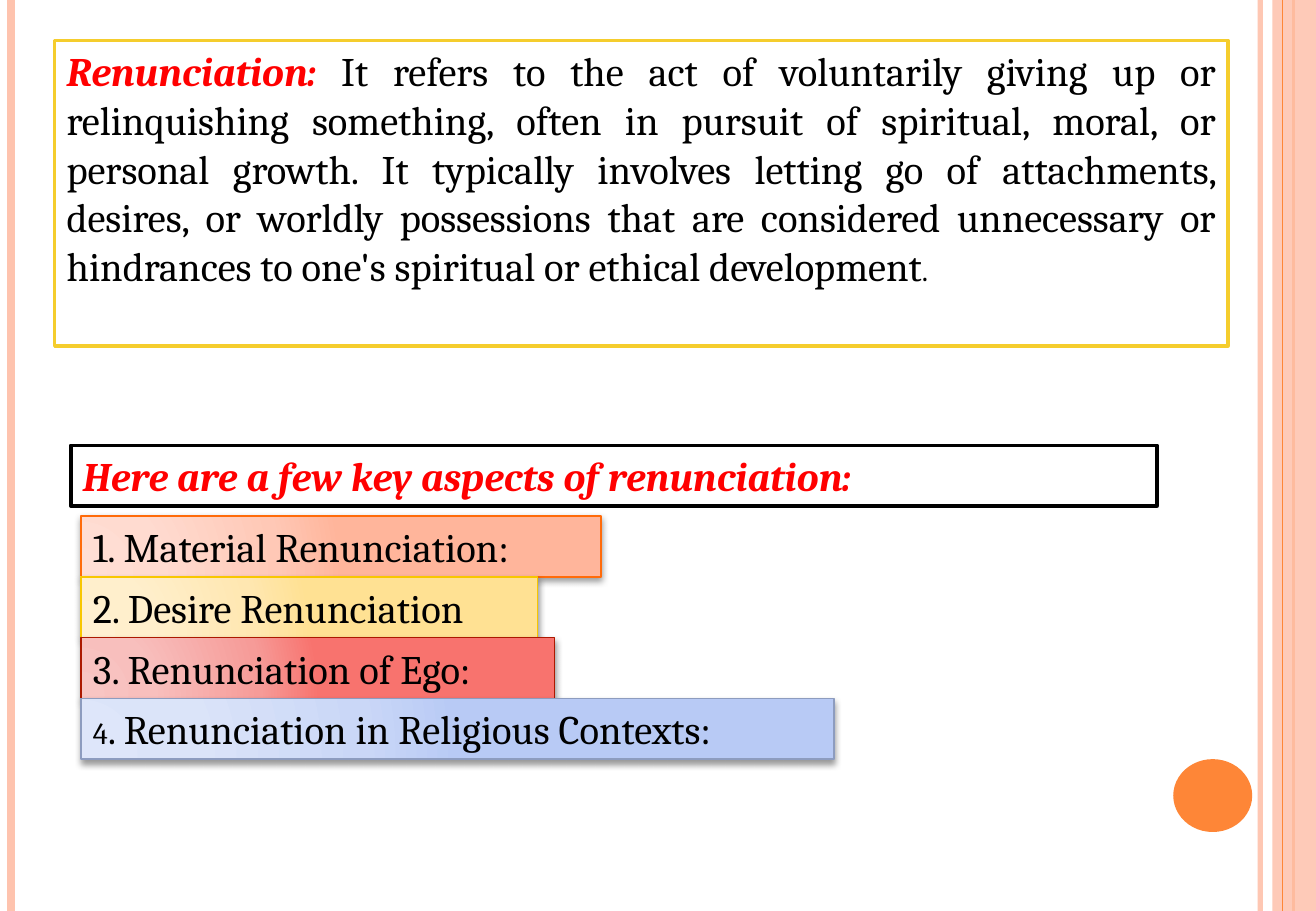
from lxml.etree import SubElement
from pptx import Presentation
from pptx.dml.color import RGBColor
from pptx.enum.shapes import MSO_CONNECTOR, MSO_SHAPE
from pptx.enum.text import MSO_ANCHOR, PP_ALIGN
from pptx.oxml import parse_xml
from pptx.oxml.ns import nsdecls, qn
from pptx.util import Inches, Pt

WHITE = RGBColor(0xFF, 0xFF, 0xFF)
BLACK = RGBColor(0x00, 0x00, 0x00)
RED = RGBColor(0xFF, 0x00, 0x00)
PEACH = RGBColor(0xFE, 0xC3, 0xAE)
ORANGE = RGBColor(0xFE, 0x86, 0x37)
GOLD = RGBColor(0xF5, 0xCD, 0x2D)
RUST = RGBColor(0xFF, 0x6B, 0x0A)
YELLOW = RGBColor(0xF8, 0xC7, 0x00)
MAROON = RGBColor(0xAC, 0x18, 0x00)
STEEL = RGBColor(0x8D, 0x9C, 0xBF)

# Grid of 130 columns by 90 rows, twelve to the inch
CELL = Inches(1) / 12
COLS, ROWS = 130, 90

deck = Presentation()
deck.slide_width = round(COLS * CELL)
deck.slide_height = round(ROWS * CELL)
slide = deck.slides.add_slide(deck.slide_layouts[6])
shapes = slide.shapes


def add_box(kind, left, top, width, height, fill=None, edge=None, line=1):
    box = shapes.add_shape(kind, *[round(n * CELL) for n in (left, top, width, height)])
    box.shadow.inherit = False
    if fill is not None:
        box.fill.solid()
        box.fill.fore_color.rgb = fill
    if edge is None:
        box.line.fill.background()
    else:
        box.line.color.rgb = edge
        box.line.width = Pt(line)
    return box


def add_text(box, runs, align=PP_ALIGN.LEFT):
    frame = box.text_frame
    frame.word_wrap = True
    frame.vertical_anchor = MSO_ANCHOR.TOP
    para = frame.paragraphs[0]
    para.alignment = align
    for text, size, color, strong in runs:
        run = para.add_run()
        run.text = text
        font = run.font
        font.name = "Cambria"
        font.size = Pt(size)
        font.color.rgb = color
        font.bold = font.italic = strong


# Side stripes: the band lies over the first three lines
for col, color, width, alpha in [
    (124.5, PEACH, 3, 93),
    (1.1, PEACH, 4.5, 100),
    (127.8, ORANGE, 1.5, 100),
    (None, PEACH, 0, 87),
    (126.7, ORANGE, 0.75, 100),
]:
    if col is None:
        part = add_box(MSO_SHAPE.RECTANGLE, 125.7, 0, COLS - 125.7, ROWS, color)
    else:
        x = round(col * CELL)
        part = shapes.add_connector(MSO_CONNECTOR.STRAIGHT, x, 0, x, deck.slide_height)
        part.line.color.rgb = color
        part.line.width = Pt(width)
        SubElement(part._element.spPr, qn("a:effectLst"))
    if alpha < 100:
        tint = next(part._element.spPr.iter(qn("a:srgbClr")))
        SubElement(tint, qn("a:alpha"), val=str(alpha * 1000))

# Corner dot
add_box(MSO_SHAPE.OVAL, 115.9, 75, 7.8, 7.2, ORANGE)

# Definition
box = add_box(MSO_SHAPE.RECTANGLE, 5.4, 4, 115.9, 30.2, WHITE, GOLD, 2)
add_text(box, [
    ("Renunciation: ", 24, RED, True),
    ("It refers to the act of voluntarily giving up or relinquishing something, "
     "often in pursuit of spiritual, moral, or personal growth. It typically "
     "involves letting go of attachments, desires, or worldly possessions that "
     "are considered unnecessary or hindrances to one's spiritual or ethical "
     "development", 24, BLACK, False),
    (".", 18, BLACK, False),
], PP_ALIGN.JUSTIFY)

# Heading of the list
box = add_box(MSO_SHAPE.RECTANGLE, 7, 44, 107.3, 6, WHITE, BLACK, 2)
add_text(box, [("Here are a few key aspects of renunciation:", 24, RED, True)])

# Four aspects, each with a round gradient and a soft shadow
aspects = [
    ("1", 24, ". Material Renunciation:", 51.4, RUST,
     ("FFDED5", "FFDBD0", "FFC8B6", "FFB59B")),
    ("2", 24, ". Desire Renunciation", 45.1, YELLOW,
     ("FFF0D1", "FFEFCC", "FFE7B1", "FFE193")),
    ("3", 24, ". Renunciation of Ego:", 46.8, MAROON,
     ("F8C5C3", "F8BFBD", "F69B98", "F8736E")),
    ("4", 18, ". Renunciation in Religious Contexts:", 74.4, STEEL,
     ("DEE6FA", "DBE4F9", "CAD7F7", "B8CAF5")),
]
for row, (digit, size, label, width, edge, tones) in enumerate(aspects):
    box = add_box(MSO_SHAPE.RECTANGLE, 8, 51 + 6 * row, width, 6, None, edge)
    add_text(box, [(digit, size, BLACK, False), (label, 24, BLACK, False)])
    props = box._element.spPr
    stops = "".join(
        f'<a:gs pos="{pos * 1000}"><a:srgbClr val="{tone}"/></a:gs>'
        for pos, tone in zip((0, 30, 75, 100), tones)
    )
    box.fill.gradient()
    props.replace(props.find(qn("a:gradFill")), parse_xml(
        f'<a:gradFill {nsdecls("a")} rotWithShape="1"><a:gsLst>{stops}</a:gsLst>'
        '<a:path path="circle"><a:fillToRect l="5000" t="100000" r="120000" '
        'b="10000"/></a:path></a:gradFill>'
    ))
    props.find(qn("a:effectLst")).append(parse_xml(
        f'<a:outerShdw {nsdecls("a")} blurRad="{Pt(4)}" dist="{Pt(2)}" '
        'dir="5400000" rotWithShape="0"><a:srgbClr val="000000">'
        '<a:alpha val="40000"/></a:srgbClr></a:outerShdw>'
    ))

deck.save("out.pptx")
